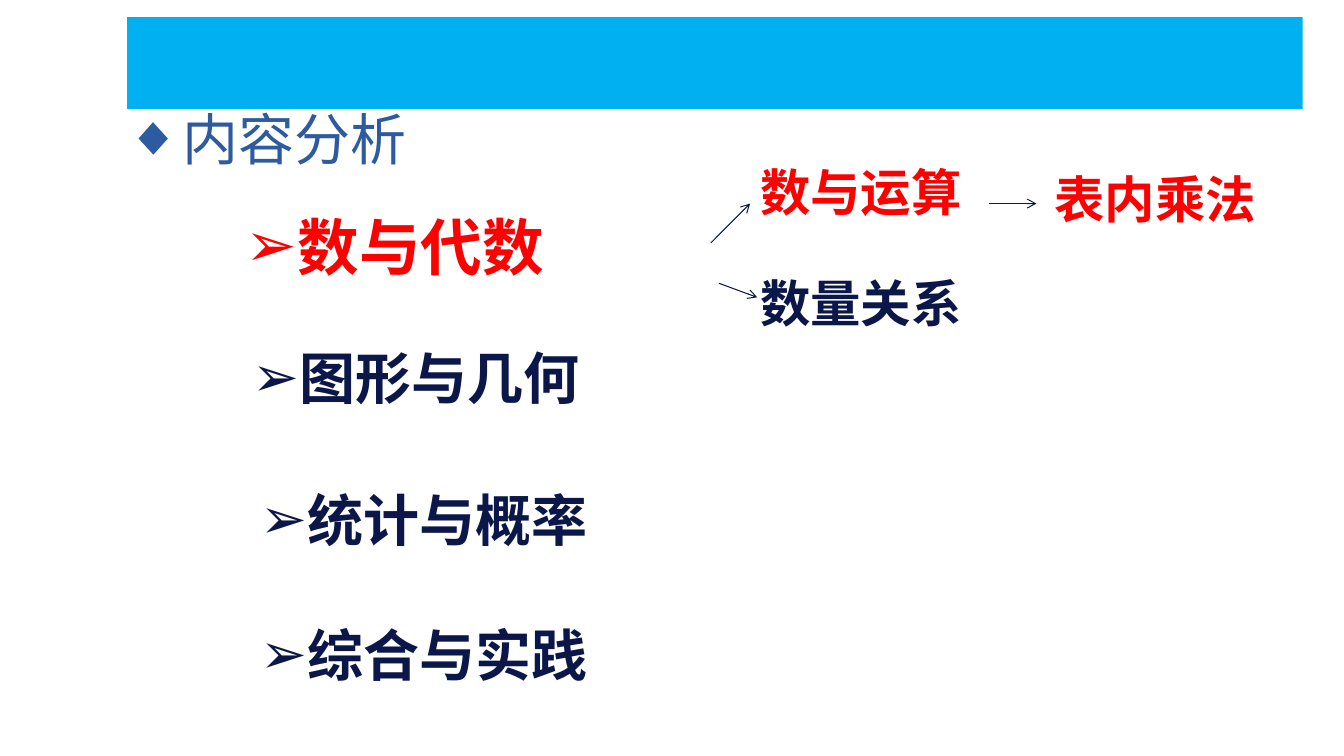
from dataclasses import dataclass

from pptx import Presentation
from pptx.dml.color import RGBColor
from pptx.enum.shapes import MSO_CONNECTOR as Link, MSO_SHAPE as Preset
from pptx.enum.text import MSO_AUTO_SIZE as Fit
from pptx.oxml.ns import qn
from pptx.slide import Slide
from pptx.util import Inches, Pt
from lxml.etree import SubElement

NAVY, RED, BLUE, SKY, WHITE = "0B1749", "FF0000", "2E5BA0", "00B0F0", "FFFFFF"
SANS = "Noto Sans CJK SC"


@dataclass
class Band:
    left: float
    top: float
    width: float
    height: float
    fill: str


@dataclass
class Label:
    text: str
    left: float
    top: float
    width: float
    height: float
    size: int
    color: str = NAVY
    font: str = "Arial"
    bold: bool = True
    bullet: str = ""
    hang: float = 0
    wrap: bool = True


@dataclass
class Arrow:
    x1: float
    y1: float
    x2: float
    y2: float


BANDS = [
    Band(1.26, 0.17, 11.66, 0.91, SKY),
    Band(0.42, 0.17, 0.96 - 0.12, 0.97, WHITE),
]
LABELS = [
    Label("数与代数", 2.34, 2.02, 7.71, 0.84, 44, RED, SANS, bullet="➢", hang=0.5),
    *(Label(text, left, top, 6.11, 0.77, 40, bullet="➢", hang=0.46)
      for text, left, top in [("图形与几何", 2.41, 3.36),
                              ("统计与概率", 2.49, 4.77),
                              ("综合与实践", 2.49, 6.11)]),
    Label("数与运算", 7.44, 1.55, 3.78, 0.71, 36, RED),
    Label("数量关系", 7.44, 2.65, 3.78, 0.71, 36),
    Label("表内乘法", 10.36, 1.62, 4.22, 0.71, 36, RED, "Noto Sans CJK JP"),
    Label("内容分析", 1.15, 0.99, 3, 0.77, 40, BLUE, SANS, False, "◆", 0.56, False),
]
ARROWS = [
    Arrow(7.05, 2.41, 7.44, 2.02),
    Arrow(7.13, 2.81, 7.51, 2.95),
    Arrow(9.81, 2.02, 10.28, 2.02),
]


def rgb(code: str) -> RGBColor:
    return RGBColor.from_string(code)


def add_band(slide: Slide, band: Band) -> None:
    shape = slide.shapes.add_shape(
        Preset.RECTANGLE, Inches(band.left), Inches(band.top),
        Inches(band.width), Inches(band.height))
    shape.shadow.inherit = False
    shape.fill.solid()
    shape.fill.fore_color.rgb = rgb(band.fill)
    shape.line.fill.background()


def add_label(slide: Slide, label: Label) -> None:
    box = slide.shapes.add_textbox(
        Inches(label.left), Inches(label.top),
        Inches(label.width), Inches(label.height))
    frame = box.text_frame
    frame.word_wrap = label.wrap
    frame.auto_size = Fit.SHAPE_TO_FIT_TEXT
    para = frame.paragraphs[0]
    if label.bullet:
        props = para._p.get_or_add_pPr()
        props.set("marL", str(Inches(label.hang)))
        props.set("indent", str(-Inches(label.hang)))
        SubElement(props, qn("a:buFont"), typeface="Arial")
        SubElement(props, qn("a:buChar"), char=label.bullet)
    run = para.add_run()
    run.text = label.text
    font = run.font
    font.name, font.size, font.bold = label.font, Pt(label.size), label.bold
    font.color.rgb = rgb(label.color)
    SubElement(run._r.get_or_add_rPr(), qn("a:ea"), typeface=label.font)


def add_arrow(slide: Slide, arrow: Arrow) -> None:
    line = slide.shapes.add_connector(
        Link.STRAIGHT, Inches(arrow.x1), Inches(arrow.y1),
        Inches(arrow.x2), Inches(arrow.y2))
    line.line.width = Pt(0.75)
    line.line.color.rgb = rgb(NAVY)
    SubElement(line.line._get_or_add_ln(), qn("a:tailEnd"), type="arrow")
    SubElement(line._element.spPr, qn("a:effectLst"))


def main() -> None:
    deck = Presentation()
    deck.slide_width, deck.slide_height = Inches(13.33), Inches(7.5)
    slide = deck.slides.add_slide(deck.slide_layouts[6])
    for band in BANDS:
        add_band(slide, band)
    for label in LABELS:
        add_label(slide, label)
    for arrow in ARROWS:
        add_arrow(slide, arrow)
    deck.save("out.pptx")


if __name__ == "__main__":
    main()
